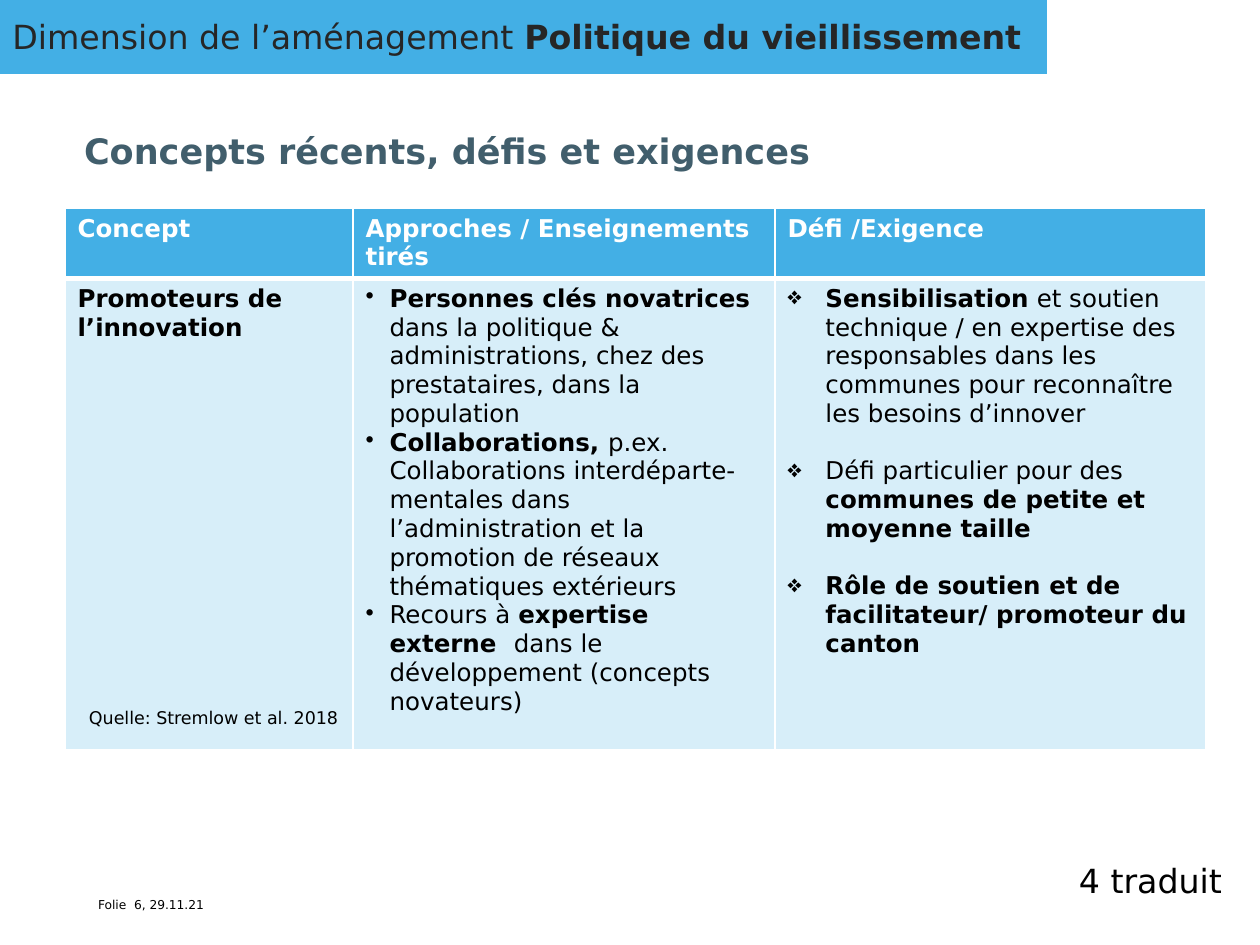
from lxml import etree
from pptx import Presentation
from pptx.dml.color import RGBColor
from pptx.enum.shapes import MSO_SHAPE
from pptx.enum.text import MSO_ANCHOR, PP_ALIGN
from pptx.oxml.ns import qn
from pptx.util import Pt

RECTANGLE = MSO_SHAPE.RECTANGLE
LEFT = PP_ALIGN.LEFT
TOP, MIDDLE, BOTTOM = MSO_ANCHOR.TOP, MSO_ANCHOR.MIDDLE, MSO_ANCHOR.BOTTOM

BLUE = RGBColor(0x43, 0xAF, 0xE5)
PALE_BLUE = RGBColor(0xD7, 0xEE, 0xF9)
SLATE = RGBColor(0x41, 0x5E, 0x6C)
CHARCOAL = RGBColor(0x26, 0x26, 0x26)
BLACK = RGBColor(0, 0, 0)
WHITE = RGBColor(0xFF, 0xFF, 0xFF)
FONT = "DejaVu Sans"


def px(*lengths):
    return [round(length * 914400 / 126) for length in lengths]


def add_spans(para, spans, size, color):
    para.alignment = LEFT
    for text, bold in spans:
        if text == "\n":
            para.add_line_break()
            continue
        span = para.add_run()
        span.text = text
        span.font.name = FONT
        span.font.size = Pt(size)
        span.font.bold = bold
        span.font.color.rgb = color


deck = Presentation()
deck.slide_width, deck.slide_height = px(1260, 945)
page = deck.slides.add_slide(deck.slide_layouts[5])

title = page.shapes.title
title.left, title.top, title.width, title.height = px(74, 106, 1171, 76)
title_frame = title.text_frame
title_frame.vertical_anchor = BOTTOM
title_frame.margin_left, title_frame.margin_right = px(10, 10)
title_frame.margin_top, title_frame.margin_bottom = px(10, 10)
add_spans(title_frame.paragraphs[0], [("Concepts récents, défis et exigences", True)], 20, SLATE)

HEADERS = ["Concept", "Approches / Enseignements tirés", "Défi /Exigence"]
CONCEPT = [[("Promoteurs de l’innovation", True)]]
APPROACHES = [
    [("Personnes clés novatrices ", True),
     ("dans la politique & administrations, chez des prestataires, dans la population", False)],
    [("Collaborations, ", True), ("p.ex.", False), ("\n", False),
     ("Collaborations interdéparte-mentales dans l’administration et la promotion "
      "de réseaux thématiques extérieurs", False)],
    [("Recours à ", False), ("expertise externe  ", True),
     ("dans le développement (concepts novateurs)", False)],
]
CHALLENGES = [
    [("Sensibilisation", True),
     (" et soutien technique / en expertise des responsables dans les communes "
      "pour reconnaître les besoins d’innover", False)],
    [("Défi particulier pour des ", False), ("communes de petite et moyenne taille", True)],
    [("Rôle de soutien et de facilitateur/ promoteur du canton", True)],
]
HEADER_ROW = [([[(header, True)]], None, 0, 0) for header in HEADERS]
BODY_ROW = [(CONCEPT, None, 0, 0), (APPROACHES, "•", 24, 0), (CHALLENGES, "❖", 38, 16.4)]

table = page.shapes.add_table(2, 3, *px(65, 208, 1141, 542)).table
for column, width in zip(table.columns, px(288, 422, 431)):
    column.width = width
for row, height in zip(table.rows, px(70, 472)):
    row.height = height

for row_index, (contents, fill, color) in enumerate(
        [(HEADER_ROW, BLUE, WHITE), (BODY_ROW, PALE_BLUE, BLACK)]):
    for column_index, (paragraphs, bullet, indent, gap) in enumerate(contents):
        cell = table.cell(row_index, column_index)
        cell.fill.solid()
        cell.fill.fore_color.rgb = fill
        cell.vertical_anchor = TOP
        for index, spans in enumerate(paragraphs):
            frame = cell.text_frame
            para = frame.paragraphs[0] if index == 0 else frame.add_paragraph()
            if bullet:
                properties = para._p.get_or_add_pPr()
                margin, = px(indent)
                properties.set("marL", str(margin))
                properties.set("indent", str(-margin))
                etree.SubElement(properties, qn("a:buChar")).set("char", bullet)
            if index > 0 and gap:
                para.space_before = Pt(gap)
            add_spans(para, spans, 14, color)
        edge_widths = {"lnL": 1, "lnR": 1, "lnT": 3 if row_index else 1, "lnB": 1 if row_index else 3}
        for position, (edge, width) in enumerate(edge_widths.items()):
            line = etree.Element(qn(f"a:{edge}"), w=str(Pt(width)))
            solid = etree.SubElement(line, qn("a:solidFill"))
            etree.SubElement(solid, qn("a:srgbClr")).set("val", str(WHITE))
            cell._tc.get_or_add_tcPr().insert(position, line)

banner = page.shapes.add_shape(RECTANGLE, *px(0, -1, 1047, 75))
banner.shadow.inherit = False
banner.fill.solid()
banner.fill.fore_color.rgb = BLUE
banner.line.fill.background()
banner.text_frame.vertical_anchor = MIDDLE
add_spans(banner.text_frame.paragraphs[0],
          [("Dimension de l’aménagement ", False), ("Politique du vieillissement", True)],
          19, CHARCOAL)

NOTES = [
    ("Folie", 7, (88, 890, 373, 38), 10, 10, True),
    ("6, 29.11.21", 7, (124, 890, 1118, 55), 10, 10, True),
    ("Quelle: Stremlow et al. 2018", 10, (77, 701, 281, 34), 12, 6, True),
    ("4 traduit", 19, (1066, 854, 170, 53), 13, 6, False),
]
for text, size, area, side, edge, wrap in NOTES:
    box = page.shapes.add_textbox(*px(*area))
    frame = box.text_frame
    frame.word_wrap = wrap
    frame.margin_left, frame.margin_right = px(side, side)
    frame.margin_top, frame.margin_bottom = px(edge, edge)
    add_spans(frame.paragraphs[0], [(text, False)], size, BLACK)

deck.save("out.pptx")
